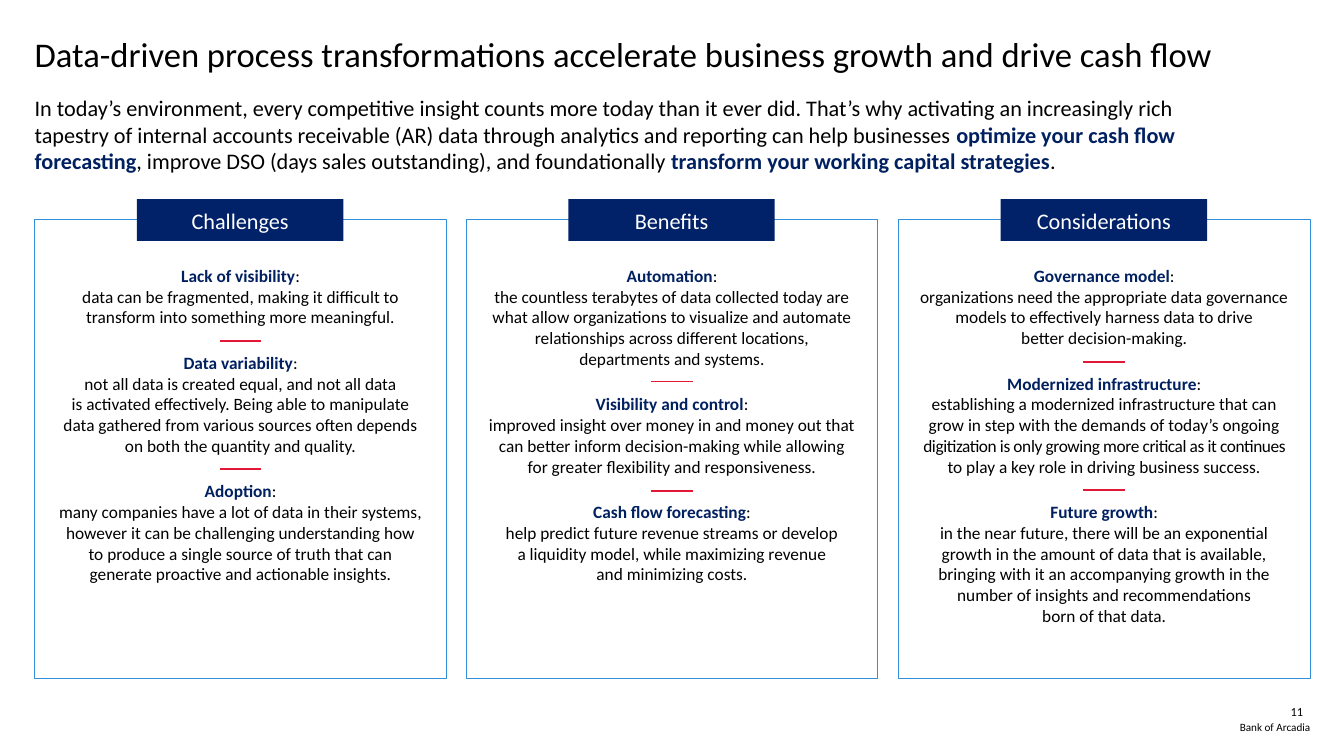
"""Build the slide on data-driven process transformations and cash flow."""
from copy import deepcopy
from typing import NamedTuple

from lxml.etree import SubElement
from pptx import Presentation
from pptx.dml.color import RGBColor
from pptx.enum.shapes import MSO_CONNECTOR, MSO_SHAPE
from pptx.enum.text import MSO_ANCHOR, MSO_AUTO_SIZE, PP_ALIGN
from pptx.oxml.ns import qn
from pptx.shapes.base import BaseShape
from pptx.slide import Slide
from pptx.util import Emu, Pt

EMU_PER_PX = 9144
FONT = "Calibri"
BLACK = RGBColor(0x00, 0x00, 0x00)
WHITE = RGBColor(0xFF, 0xFF, 0xFF)
NAVY = RGBColor(0x01, 0x21, 0x69)
EMPHASIS = RGBColor(0x00, 0x20, 0x60)
BORDER_BLUE = RGBColor(0x33, 0x8F, 0xD9)
RED = RGBColor(0xE3, 0x18, 0x37)

FIRST_LEFT, PANEL_TOP, PANEL_WIDTH, PANEL_HEIGHT = 39, 247, 463, 516
TWO_PITCHES = 971
TAB_INDENT, TAB_TOP, TAB_WIDTH, TAB_HEIGHT = 115, 224, 232, 47
DIVIDER_INDENT, DIVIDER_WIDTH = 208, 47


class Span(NamedTuple):
    text: str
    strong: bool = False
    tracking: int = 0


class Topic(NamedTuple):
    heading: str
    details: tuple[Span, ...]


class Column(NamedTuple):
    name: str
    divider_tops: tuple[int, int]
    topics: tuple[Topic, ...]


COLUMNS = (
    Column("Challenges", (383, 527), (
        Topic("Lack of visibility", (Span(
            "data can be fragmented, making it difficult to "
            "transform into something more meaningful."),)),
        Topic("Data variability", (Span(
            "not all data is created equal, and not all data\n"
            "is activated effectively. Being able to manipulate\n"
            "data gathered from various sources often depends\n"
            "on both the quantity and quality."),)),
        Topic("Adoption", (Span(
            "many companies have a lot of data in their systems, "
            "however it can be challenging understanding how\n"
            "to produce a single source of truth that can\n"
            "generate proactive and actionable insights."),)),
    )),
    Column("Benefits", (429, 552), (
        Topic("Automation", (Span(
            "the countless terabytes of data collected today are "
            "what allow organizations to visualize and automate "
            "relationships across different locations, departments and systems."),)),
        Topic("Visibility and control", (Span(
            "improved insight over money in and money out that "
            "can better inform decision-making while allowing\n"
            "for greater flexibility and responsiveness."),)),
        Topic("Cash flow forecasting", (Span(
            "help predict future revenue streams or develop\n"
            "a liquidity model, while maximizing revenue\n"
            "and minimizing costs."),)),
    )),
    Column("Considerations", (407, 551), (
        Topic("Governance model", (Span(
            "organizations need the appropriate data governance "
            "models to effectively harness data to drive\n"
            "better decision-making."),)),
        Topic("Modernized infrastructure", (
            Span("establishing a modernized infrastructure that can "
                 "grow in step with the demands of today’s ongoing "),
            Span("digitization is only growing more critical as it continues ",
                 tracking=-30),
            Span("to play a key role in driving business success."))),
        Topic("Future growth", (Span(
            "in the near future, there will be an exponential "
            "growth in the amount of data that is available, "
            "bringing with it an accompanying growth in the "
            "number of insights and recommendations\n"
            "born of that data."),)),
    )),
)

INTRODUCTION = (
    Span("In today’s environment, every competitive insight counts more today "
         "than it ever did. That’s why activating an increasingly rich tapestry "
         "of internal accounts receivable (AR) data through analytics and "
         "reporting can help businesses "),
    Span("optimize your cash flow forecasting", strong=True),
    Span(", improve DSO (days sales outstanding), and foundationally "),
    Span("transform your working capital strategies", strong=True),
    Span("."),
)


def px(length: int) -> Emu:
    """Convert px to EMU."""
    return Emu(length * EMU_PER_PX)


def write(shape: BaseShape, *paragraphs: tuple[Span, ...], size: int,
          color: RGBColor = BLACK, align: PP_ALIGN = PP_ALIGN.LEFT,
          anchor: MSO_ANCHOR = MSO_ANCHOR.TOP, wrap: bool = True,
          insets: tuple[int, int, int, int] = (0, 0, 0, 0),
          gap: int = 0, line_spacing: int | None = None) -> None:
    """Fill a shape with formatted paragraphs."""
    frame = shape.text_frame
    frame.auto_size = MSO_AUTO_SIZE.NONE
    frame.word_wrap = wrap
    frame.vertical_anchor = anchor
    (frame.margin_left, frame.margin_top,
     frame.margin_right, frame.margin_bottom) = map(px, insets)
    for index, spans in enumerate(paragraphs):
        paragraph = frame.add_paragraph() if index else frame.paragraphs[0]
        paragraph.alignment = align
        if line_spacing:
            paragraph.line_spacing = Pt(line_spacing)
        if index < len(paragraphs) - 1:
            paragraph.space_after = Pt(gap)
        for span in spans:
            for row, words in enumerate(span.text.split("\n")):
                if row:
                    paragraph.add_line_break()
                    line_break = paragraph._p[-1]
                    line_break.append(deepcopy(run._r.get_or_add_rPr()))
                run = paragraph.add_run()
                run.text = words
                run.font.name = FONT
                run.font.size = Pt(size)
                run.font.bold = span.strong
                run.font.color.rgb = EMPHASIS if span.strong else color
                if span.tracking:
                    run._r.get_or_add_rPr().set("spc", str(span.tracking))


def add_text(slide: Slide, left: int, top: int, width: int, height: int) -> BaseShape:
    """Add an empty text box."""
    return slide.shapes.add_textbox(px(left), px(top), px(width), px(height))


def add_rectangle(slide: Slide, left: int, top: int, width: int, height: int,
                  fill: RGBColor | None = None,
                  border: RGBColor | None = None) -> BaseShape:
    """Add a flat rectangle with an optional fill and border."""
    rectangle = slide.shapes.add_shape(
        MSO_SHAPE.RECTANGLE, px(left), px(top), px(width), px(height))
    rectangle.shadow.inherit = False
    if fill is None:
        rectangle.fill.background()
    else:
        rectangle.fill.solid()
        rectangle.fill.fore_color.rgb = fill
    if border is None:
        rectangle.line.fill.background()
    else:
        rectangle.line.color.rgb = border
        rectangle.line.width = Pt(0.75)
    return rectangle


def add_divider(slide: Slide, left: int, top: int) -> None:
    """Add a short red rule between topics."""
    divider = slide.shapes.add_connector(
        MSO_CONNECTOR.STRAIGHT, px(left), px(top), px(left + DIVIDER_WIDTH), px(top))
    divider.line.color.rgb = RED
    divider.line.width = Pt(1.5)
    SubElement(divider._element.spPr, qn("a:effectLst"))


def add_column(slide: Slide, column: Column, left: int) -> None:
    """Add a bordered panel with its name tab, topics and dividers."""
    panel = add_rectangle(slide, left, PANEL_TOP, PANEL_WIDTH, PANEL_HEIGHT,
                          border=BORDER_BLUE)
    topics = [(Span(topic.heading, strong=True), Span(":\n"), *topic.details)
              for topic in column.topics]
    write(panel, *topics, size=14, align=PP_ALIGN.CENTER,
          insets=(24, 51, 24, 24), gap=20)
    tab = add_rectangle(slide, left + TAB_INDENT, TAB_TOP, TAB_WIDTH, TAB_HEIGHT,
                        fill=NAVY)
    write(tab, (Span(column.name),), size=18, color=WHITE,
          align=PP_ALIGN.CENTER, anchor=MSO_ANCHOR.MIDDLE)
    for top in column.divider_tops:
        add_divider(slide, left + DIVIDER_INDENT, top)


def main() -> None:
    """Build and save the slide."""
    deck = Presentation()
    deck.slide_width, deck.slide_height = px(1511), px(850)
    slide = deck.slides.add_slide(deck.slide_layouts[5])
    title = slide.shapes.title
    title.left, title.top, title.width, title.height = map(px, (39, 55, 1350, 30))
    write(title, (Span("Data-driven process transformations accelerate "
                       "business growth and drive cash flow"),),
          size=28, line_spacing=21)
    write(add_text(slide, 39, 106, 1350, 91), INTRODUCTION, size=18)
    for index, column in enumerate(COLUMNS):
        add_column(slide, column, FIRST_LEFT + index * TWO_PITCHES // 2)
    write(add_text(slide, 1444, 787, 28, 27), (Span("11"),), size=10,
          align=PP_ALIGN.CENTER, anchor=MSO_ANCHOR.MIDDLE, wrap=False)
    write(add_text(slide, 1300, 810, 173, 15), (Span("Bank of Arcadia"),), size=9,
          align=PP_ALIGN.RIGHT, anchor=MSO_ANCHOR.MIDDLE)
    deck.save("out.pptx")


if __name__ == "__main__":
    main()
